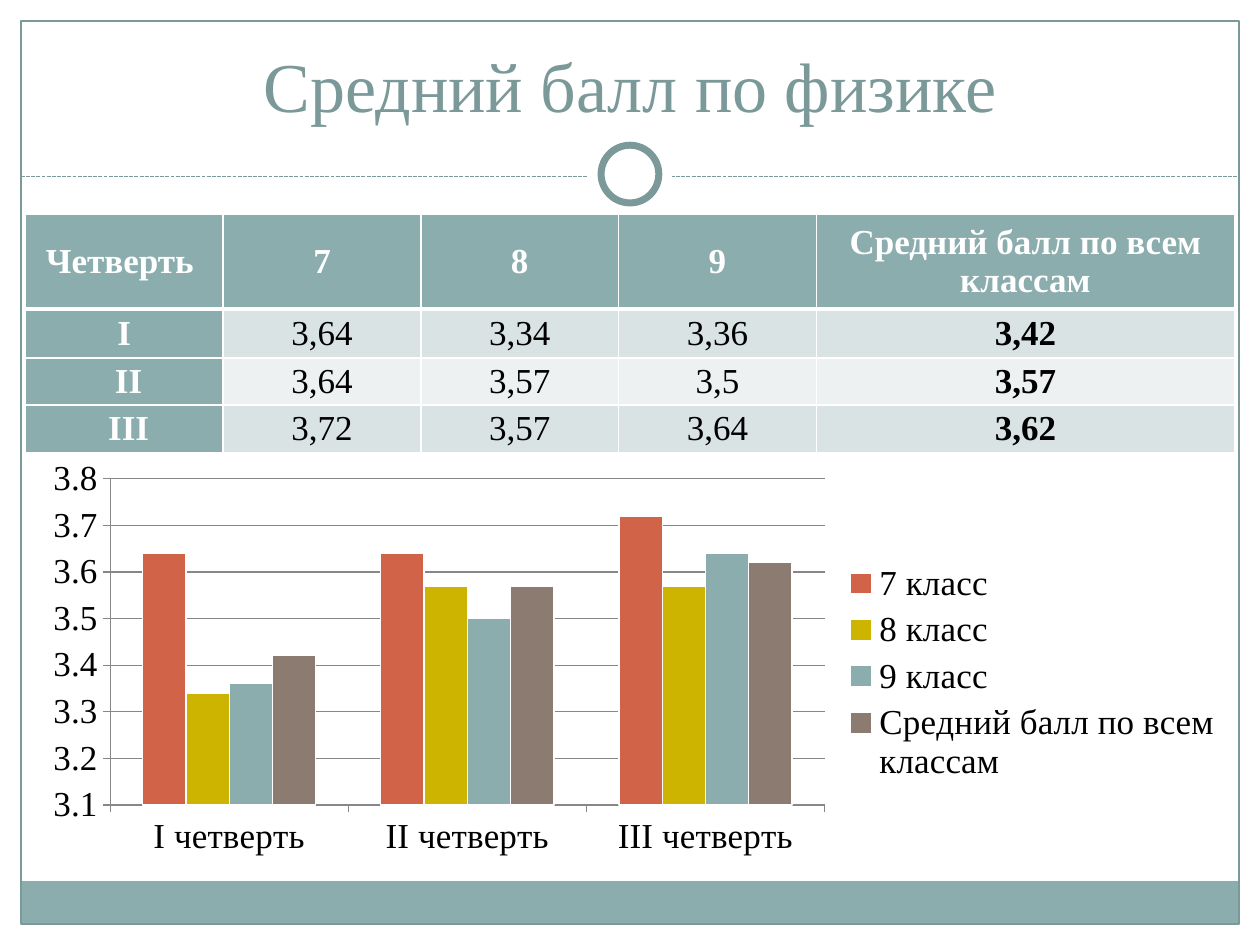
from dataclasses import dataclass

from lxml.etree import SubElement
from pptx import Presentation
from pptx.chart.data import CategoryChartData
from pptx.dml.color import RGBColor
from pptx.enum.chart import XL_CHART_TYPE as Chart, XL_LEGEND_POSITION as Legend
from pptx.enum.chart import XL_TICK_MARK as Tick
from pptx.enum.dml import MSO_LINE as Dash
from pptx.enum.shapes import MSO_CONNECTOR as Conn, MSO_SHAPE as Shape
from pptx.enum.text import MSO_ANCHOR as Anchor, PP_ALIGN as Align
from pptx.oxml import parse_xml
from pptx.oxml.ns import nsdecls, qn
from pptx.util import Pt


@dataclass(frozen=True)
class Theme:
    font: str = "Times New Roman"
    title_size: float = 40
    body_size: float = 20
    white: str = "FFFFFF"
    black: str = "000000"
    accent: str = "7C999A"
    teal: str = "8CADAE"
    grid: str = "878787"
    bands: tuple = ("DAE3E3", "EEF1F2")


@dataclass(frozen=True)
class Box:
    kind: Shape
    left: float
    top: float
    width: float
    height: float
    fill: str | None = None
    line: str | None = None
    weight: float = 0.75


@dataclass(frozen=True)
class Series:
    name: str
    values: tuple
    color: str


T = Theme()
FRAME = Box(Shape.RECTANGLE, 12, 12, 696, 516, line=T.accent)
FOOTER = Box(Shape.RECTANGLE, 12, 503.5, 696, 24.5, fill=T.teal)
RING_GAP = Box(Shape.OVAL, 336, 75.5, 48, 48, fill=T.white)
RING = Box(Shape.OVAL, 343.5, 83, 33, 33, fill=T.white, line=T.accent, weight=4)

HEADER = ("Четверть ", "7", "8", "9", "Средний балл по всем классам")
QUARTERS = ("I", " II", " III")
SERIES = (
    Series("7 класс", (3.64, 3.64, 3.72), "D16349"),
    Series("8 класс", (3.34, 3.57, 3.57), "CCB400"),
    Series("9 класс", (3.36, 3.5, 3.64), T.teal),
    Series(HEADER[-1], (3.42, 3.57, 3.62), "8C7B70"),
)


def rgb(color: str) -> RGBColor:
    return RGBColor.from_string(color)


def style_font(font, size: float, color: str, bold: bool = False) -> None:
    font.name, font.size, font.bold = T.font, Pt(size), bold
    font.color.rgb = rgb(color)


def write(tf, text: str, size: float, color: str, bold: bool = False) -> None:
    p = tf.paragraphs[0]
    p.alignment = Align.CENTER
    r = p.add_run()
    r.text = text
    style_font(r.font, size, color, bold)


def paint_line(line, color: str, weight: float = 0.75) -> None:
    line.color.rgb = rgb(color)
    line.width = Pt(weight)


def draw_box(s, box: Box) -> None:
    sp = s.shapes.add_shape(box.kind, Pt(box.left), Pt(box.top),
                            Pt(box.width), Pt(box.height))
    sp.shadow.inherit = False
    if box.fill:
        sp.fill.solid()
        sp.fill.fore_color.rgb = rgb(box.fill)
    else:
        sp.fill.background()
    if box.line:
        paint_line(sp.line, box.line, box.weight)
    else:
        sp.line.fill.background()


def draw_divider(s, y: float) -> None:
    line = s.shapes.add_connector(Conn.STRAIGHT, Pt(FRAME.left), Pt(y),
                                  Pt(FRAME.left + FRAME.width), Pt(y))
    paint_line(line.line, T.accent)
    line.line.dash_style = Dash.SQUARE_DOT
    SubElement(line._element.spPr, qn("a:effectLst"))


def draw_title(s, text: str) -> None:
    tf = s.shapes.add_textbox(Pt(24), Pt(18), Pt(672), Pt(60)).text_frame
    tf.word_wrap = True
    tf.vertical_anchor = Anchor.MIDDLE
    write(tf, text, T.title_size, T.accent)


def border_cell(cell, bottom: float) -> None:
    tc_pr = cell._tc.get_or_add_tcPr()
    for side, weight in (("L", 1), ("R", 1), ("T", 1), ("B", bottom)):
        ln = SubElement(tc_pr, qn(f"a:ln{side}"), w=str(Pt(weight)))
        fill = SubElement(ln, qn("a:solidFill"))
        SubElement(fill, qn("a:srgbClr"), val=T.white)


def draw_table(s) -> None:
    widths, heights = (113, 113, 113, 113, 239), (51, 28, 25, 25)
    rows = [HEADER]
    for i, quarter in enumerate(QUARTERS):
        marks = (str(x.values[i]).replace(".", ",") for x in SERIES)
        rows.append((quarter, *marks))
    table = s.shapes.add_table(len(rows), len(widths), Pt(14.5), Pt(122.5),
                               Pt(sum(widths)), Pt(sum(heights))).table
    for column, width in zip(table.columns, widths):
        column.width = Pt(width)
    for i, (row, height) in enumerate(zip(rows, heights)):
        table.rows[i].height = Pt(height)
        for j, text in enumerate(row):
            cell = table.cell(i, j)
            heading = i == 0 or j == 0
            border_cell(cell, bottom=3 if i == 0 else 1)
            cell.fill.solid()
            cell.fill.fore_color.rgb = rgb(T.teal if heading else T.bands[(i - 1) % 2])
            cell.vertical_anchor = Anchor.MIDDLE
            cell.margin_left = cell.margin_right = Pt(3)
            cell.margin_top = cell.margin_bottom = Pt(3 if i == 0 else 1.5)
            write(cell.text_frame, text, T.body_size,
                  T.white if heading else T.black,
                  heading or j == len(row) - 1)


def place_plot(chart, x: float, y: float, w: float, h: float) -> None:
    area = chart._chartSpace.chart.plotArea
    for old in area.findall(qn("c:layout")):
        area.remove(old)
    sizes = "".join(f'<c:{k} val="{v}"/>' for k, v in zip("xywh", (x, y, w, h)))
    area.insert(0, parse_xml(
        f'<c:layout {nsdecls("c")}><c:manualLayout><c:layoutTarget val="inner"/>'
        f'<c:xMode val="edge"/><c:yMode val="edge"/>{sizes}'
        '</c:manualLayout></c:layout>'))


def draw_chart(s) -> None:
    data = CategoryChartData(number_format="General")
    data.categories = [f"{q.strip()} четверть" for q in QUARTERS]
    for series in SERIES:
        data.add_series(series.name, series.values)
    chart = s.shapes.add_chart(Chart.COLUMN_CLUSTERED, Pt(14.5), Pt(258.5),
                               Pt(692), Pt(252), data).chart
    style_font(chart.font, T.body_size, T.black)
    chart.has_title = False
    chart.has_legend = True
    chart.legend.position = Legend.RIGHT
    chart.legend.include_in_layout = False

    # Clear background keeps the footer band visible
    chart._chartSpace.chart.addnext(
        parse_xml(f'<c:spPr {nsdecls("c", "a")}><a:noFill/>'
                  '<a:ln><a:noFill/></a:ln></c:spPr>'))
    place_plot(chart, 0.07, 0.06, 0.59, 0.74)

    # Axes
    values = chart.value_axis
    values.minimum_scale, values.maximum_scale, values.major_unit = 3.1, 3.8, 0.1
    values.has_major_gridlines = True
    paint_line(values.major_gridlines.format.line, T.grid)
    for axis in (values, chart.category_axis):
        axis.major_tick_mark = Tick.OUTSIDE
        axis.minor_tick_mark = Tick.NONE
        paint_line(axis.format.line, T.grid)

    # Columns
    plot = chart.plots[0]
    plot.gap_width, plot.overlap, plot.vary_by_categories = 150, 0, False
    for column, series in zip(plot.series, SERIES):
        column.format.fill.solid()
        column.format.fill.fore_color.rgb = rgb(series.color)
        paint_line(column.format.line, T.white)


def main() -> None:
    prs = Presentation()
    prs.slide_width, prs.slide_height = Pt(720), Pt(540)
    s = prs.slides.add_slide(prs.slide_layouts[6])

    # Frame and ornament
    draw_box(s, FOOTER)
    draw_box(s, FRAME)
    draw_divider(s, 100.8)
    draw_box(s, RING_GAP)
    draw_box(s, RING)

    # Content
    draw_title(s, "Средний балл по физике")
    draw_table(s)
    draw_chart(s)
    prs.save("out.pptx")


if __name__ == "__main__":
    main()
